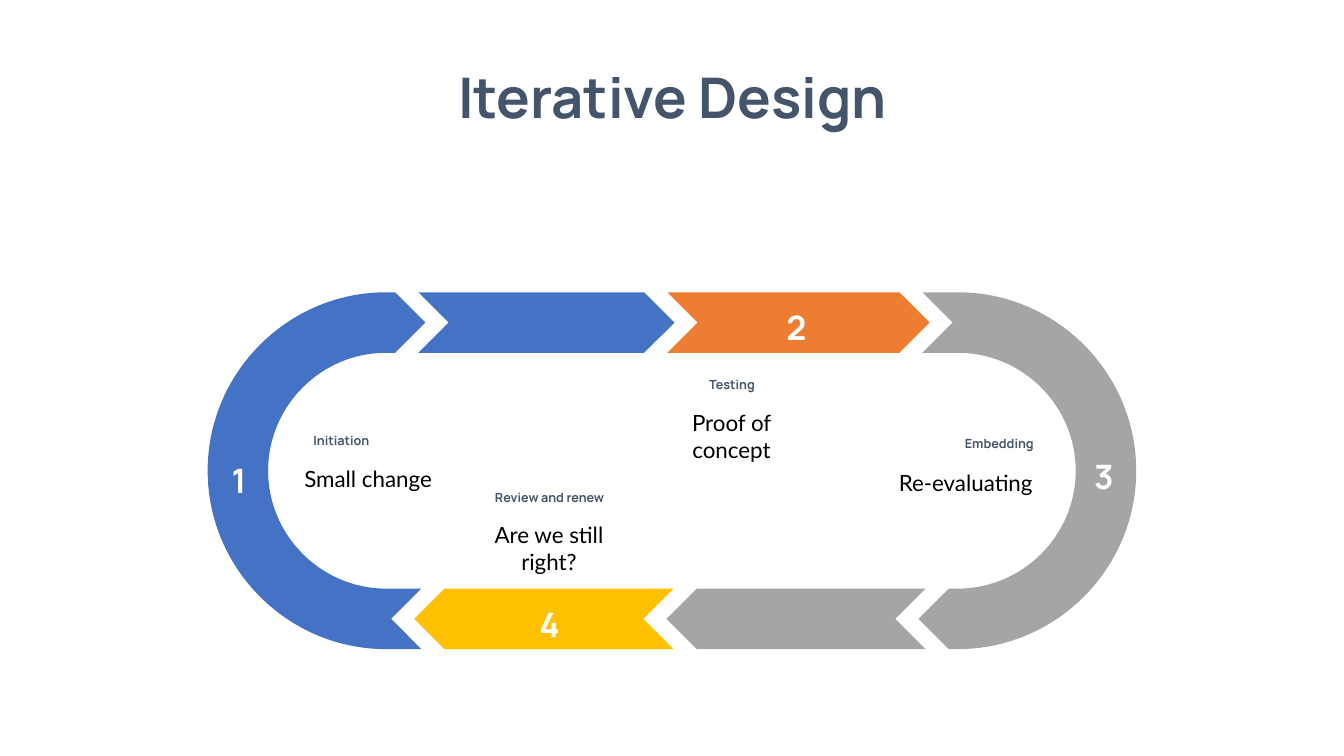
from pptx import Presentation
from pptx.dml.color import RGBColor
from pptx.enum.text import MSO_ANCHOR, MSO_AUTO_SIZE, PP_ALIGN
from pptx.oxml.ns import qn
from pptx.util import Pt

# Content: lengths in px, 100 px to the inch
PX = 9144
COLORS = {"slate": "44546A", "blue": "4472C4", "orange": "ED7D31", "gray": "A5A5A5",
          "gold": "FFC000", "white": "FFFFFF", "black": "000000"}
TITLE = ("Iterative Design", (429, 57, 476, 77))
TOP, BOTTOM, BAND = 290, 584, 60
MIDDLE, OUTER, INNER = 467, 177, 117
LEFT_CENTER, RIGHT_CENTER = 383, 950
ROUND = 0.55  # handle length of a quarter circle, in radii

# Chevrons: tail x, tip x, top, color
CHEVRONS = [
    (415, 669, TOP, "blue"),
    (662, 922, TOP, "orange"),
    (918, 661, BOTTOM, "gray"),
    (668, 411, BOTTOM, "gold"),
]
# Numbers: text, left, top
NUMBERS = [("1", 190, 451), ("2", 743, 300), ("3", 1048, 447), ("4", 498, 594)]
# Stages: heading, its left and top, detail, its left, top and height, alignment
STAGES = [
    ("Testing", 642, 369, "Proof of concept", 641, 401, 64, PP_ALIGN.CENTER),
    ("Initiation", 301, 425, "Small change", 292, 457, 37, PP_ALIGN.LEFT),
    ("Embedding", 867, 428, "Re-evaluating", 865, 461, 37, PP_ALIGN.RIGHT),
    ("Review and renew", 461, 481, "Are we still right?", 460, 512, 64, PP_ALIGN.CENTER),
]

presentation = Presentation()
presentation.slide_width = 1333 * PX
presentation.slide_height = 750 * PX
slide = presentation.slides.add_slide(presentation.slide_layouts[5])


def rgb(name):
    return RGBColor.from_string(COLORS[name])


def place(shape, box):
    shape.left, shape.top, shape.width, shape.height = (value * PX for value in box)


def write(shape, text, size, color, font_name="Manrope", bold=True,
          align=PP_ALIGN.CENTER, wrap=True):
    frame = shape.text_frame
    frame.word_wrap = wrap
    frame.auto_size = MSO_AUTO_SIZE.SHAPE_TO_FIT_TEXT
    frame.vertical_anchor = MSO_ANCHOR.TOP
    paragraph = frame.paragraphs[0]
    paragraph.alignment = align
    run = paragraph.add_run()
    run.text = text
    font = run.font
    font.name, font.size, font.bold = font_name, Pt(size), bold
    font.color.rgb = rgb(color)


def add_label(box, *text, **style):
    write(slide.shapes.add_textbox(*(value * PX for value in box)), *text, **style)


def add_outline(steps, color):
    """Draw steps: one point is a straight line, three points are a curve."""
    steps = steps + [steps[0]]
    start, *rest = [(round(x * PX), round(y * PX)) for step in steps for x, y in step]
    builder = slide.shapes.build_freeform(*start)
    builder.add_line_segments(rest, close=True)
    shape = builder.convert_to_shape()
    shape.shadow.inherit = False
    shape.fill.solid()
    shape.fill.fore_color.rgb = rgb(color)
    shape.line.fill.background()

    # Join the three points of each curve into one Bezier segment
    lines = iter(list(shape.element.iter(qn("a:lnTo"))))
    for step in steps[1:]:
        segment, *others = [next(lines) for _ in step]
        if others:
            segment.tag = qn("a:cubicBezTo")
        for other in others:
            segment.append(other[0])
            other.getparent().remove(other)


def arrow_edge(x, tip, top):
    """Steps down one pointed edge of a band."""
    return [[(x, top)], [(tip, top + BAND / 2)], [(x, top + BAND)]]


def half_circle(center, radius, side, down):
    """Steps round a half circle that bulges to side -1 or 1; down is -1 or 1."""
    across, along = side * radius, down * radius
    start, end = MIDDLE - along, MIDDLE + along
    far = center + across
    return [
        [(center, start)],
        [(center + ROUND * across, start), (far, MIDDLE - ROUND * along), (far, MIDDLE)],
        [(far, MIDDLE + ROUND * along), (center + ROUND * across, end), (center, end)],
    ]


# Title
write(slide.shapes.title, TITLE[0], 40, "slate", wrap=False)
place(slide.shapes.title, TITLE[1])

# Straight parts of the loop
for tail, tip, top, color in CHEVRONS:
    notch = BAND // 2 if tip > tail else -BAND // 2
    front = arrow_edge(tip - notch, tip, top)
    back = arrow_edge(tail, tail + notch, top)
    add_outline(back[:1] + front + back[:0:-1], color)

# Curved ends of the loop
add_outline(arrow_edge(418, 388, BOTTOM)[::-1] + half_circle(LEFT_CENTER, INNER, -1, -1)
            + arrow_edge(392, 422, TOP)[::-1] + half_circle(LEFT_CENTER, OUTER, -1, 1), "blue")
add_outline(arrow_edge(915, 945, TOP) + half_circle(RIGHT_CENTER, INNER, 1, 1)
            + arrow_edge(941, 911, BOTTOM) + half_circle(RIGHT_CENTER, OUTER, 1, -1), "gray")

# Stage numbers
for number, left, top in NUMBERS:
    add_label((left, top, 94, 50), number, 24, "white")

# Stage headings and details
for heading, head_left, head_top, detail, left, top, height, align in STAGES:
    add_label((head_left, head_top, 168, 25), heading, 9, "slate", align=align)
    add_label((left, top, 169, height), detail, 16, "black",
              font_name="Lato", bold=False, align=align)

presentation.save("out.pptx")
